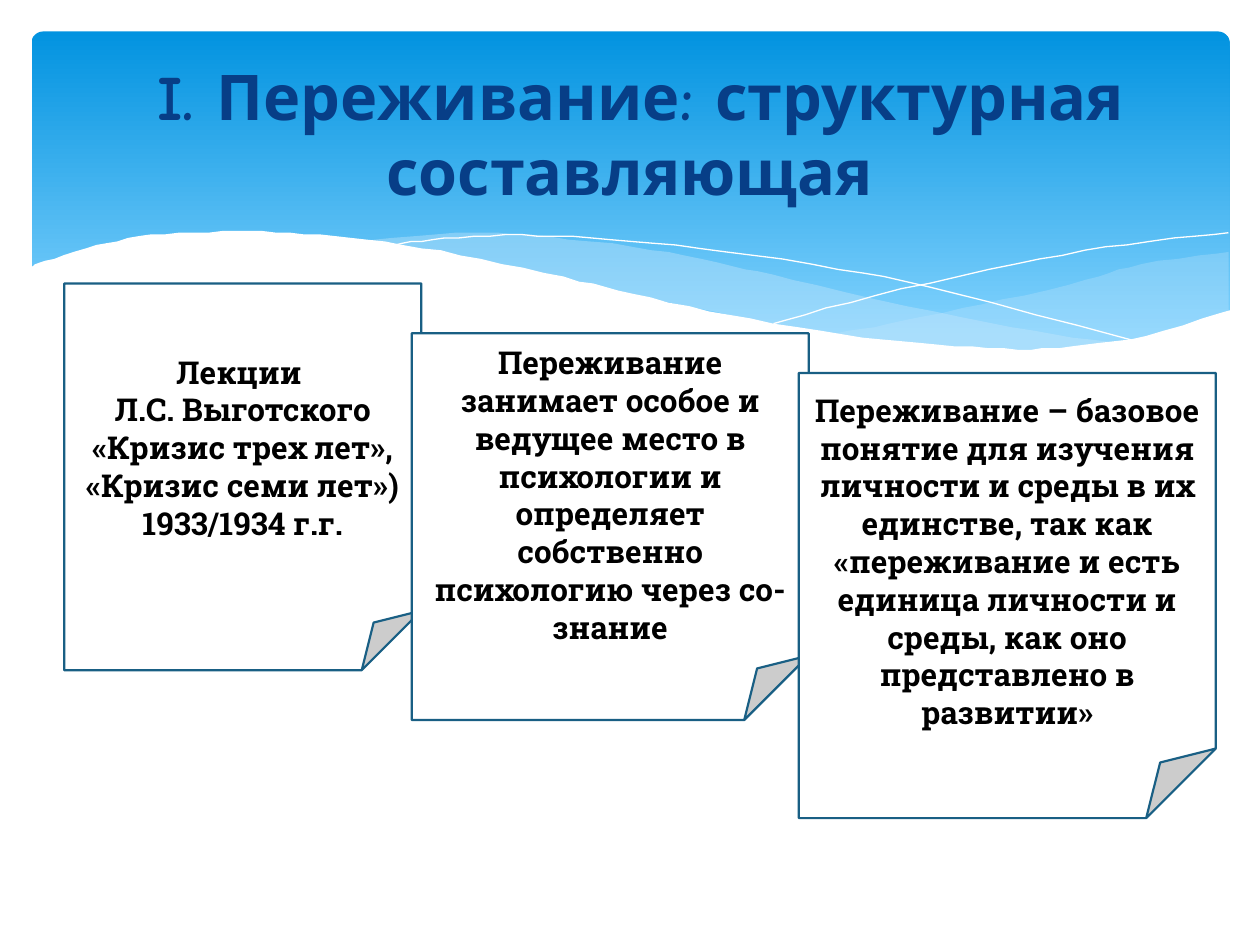
from pptx import Presentation
from pptx.dml.color import RGBColor
from pptx.enum.shapes import MSO_SHAPE
from pptx.enum.text import MSO_ANCHOR, PP_ALIGN
from pptx.oxml.ns import qn
from pptx.util import Pt
from lxml import etree

ROUNDED, FOLDED = MSO_SHAPE.ROUNDED_RECTANGLE, MSO_SHAPE.FOLDED_CORNER
MIDDLE, CENTER = MSO_ANCHOR.MIDDLE, PP_ALIGN.CENTER

WHITE = RGBColor(0xFF, 0xFF, 0xFF)
BLACK = RGBColor(0x00, 0x00, 0x00)
SKY_TOP = RGBColor(0x02, 0x93, 0xE0)
SKY_BOTTOM = RGBColor(0x83, 0xD3, 0xFE)
PALE_BLUE = RGBColor(0xC6, 0xE7, 0xFC)
NAVY = RGBColor(0x07, 0x3E, 0x87)
TEAL = RGBColor(0x19, 0x5F, 0x84)

TITLE_FONT = {"name": "Comic Neue", "size": Pt(36), "bold": True}
NOTE_FONT = {"name": "Roboto Slab", "size": Pt(18), "bold": True}

# Wave knots, in points
RIGHT_BAND = [
    [(702, 144), (652, 151), (620, 160.5), (561, 174), (508, 185), (476, 191)],
    [(476, 191), (527, 197), (586, 200), (634, 197), (673, 189.5), (702, 178)],
]
MIDDLE_BAND = [
    [(643, 196.5), (602.5, 191), (533.5, 178), (453, 160), (410, 150),
     (361, 141), (302, 134.5), (260, 133), (206, 137.5)],
    [(206, 137.5), (261, 146), (323, 160), (407.5, 178.5), (468, 190),
     (530, 198), (589, 200), (643, 196.5)],
]
FALLING_LINE = [(222.5, 140.5), (247, 137), (289, 134.5), (338, 136),
                (400, 142), (479, 153.5), (547, 168), (653, 196)]
RISING_LINE = [(441.5, 185), (500, 169), (580, 151), (644.5, 139.5), (702, 133)]
FRONT_WAVE = [
    [(703.5, 177), (655, 192), (612, 198), (582, 199.5), (536, 197),
     (481, 191), (417, 180), (362, 168), (322, 158.5), (263, 145.5),
     (210, 137), (166, 133), (127, 132.5), (86, 134.5), (55, 140.5),
     (26, 149), (16.5, 153.5)],
    [(16.5, 237), (703.5, 237)],
]

NOTES = [
    ((36.7, 162, 204, 221),
     "Лекции \vЛ.С. Выготского «Кризис трех лет», «Кризис семи лет») "
     "1933/1934 г.г."),
    ((235.3, 190.5, 226.8, 221),
     "Переживание занимает особое и ведущее место в психологии и определяет "
     "собственно психологию через со-знание"),
    ((456.4, 213.2, 238.3, 254.3),
     "Переживание – базовое понятие для изучения личности и среды в их "
     "единстве, так как «переживание и есть единица личности и среды, как оно "
     "представлено в развитии»"),
]


def smooth(knots, steps=5):
    """Return the points of a Catmull-Rom curve through the knots."""
    if len(knots) < 3:
        return knots
    padded = [knots[0], *knots, knots[-1]]
    points = [knots[0]]
    for a, b, c, d in zip(padded, padded[1:], padded[2:], padded[3:]):
        for step in range(1, steps + 1):
            t = step / steps
            points.append(tuple(
                (2 * q + (r - p) * t + (2 * p - 5 * q + 4 * r - s) * t ** 2
                 + (3 * q - p - 3 * r + s) * t ** 3) / 2
                for p, q, r, s in zip(a, b, c, d)))
    return points


class SlideBuilder:
    def __init__(self, page):
        self.page = page

    def set_text(self, box, text, font, color):
        frame = box.text_frame
        frame.word_wrap = True
        frame.vertical_anchor = MIDDLE
        para = frame.paragraphs[0]
        para.text = text
        para.alignment = CENTER
        for span in para.runs:
            for key, value in font.items():
                setattr(span.font, key, value)
            span.font.color.rgb = color

    def sky(self, left, top, width, height):
        panel = self.page.shapes.add_shape(
            ROUNDED, Pt(left), Pt(top), Pt(width), Pt(height))
        panel.adjustments[0] = 0.034
        panel.shadow.inherit = False
        panel.line.fill.background()
        panel.fill.gradient()
        panel.fill.gradient_angle = 270
        stops = [(0, SKY_TOP), (0.9, SKY_BOTTOM)]
        for stop, (position, color) in zip(panel.fill.gradient_stops, stops):
            stop.position = position
            stop.color.rgb = color

    def outline(self, curves, close):
        points = [point for knots in curves for point in smooth(knots)]
        builder = self.page.shapes.build_freeform(*points[0], scale=Pt(1))
        builder.add_line_segments(points[1:], close=close)
        wave = builder.convert_to_shape()
        wave.shadow.inherit = False
        return wave

    def band(self, curves, color, opacity=100):
        wave = self.outline(curves, True)
        wave.line.fill.background()
        wave.fill.solid()
        wave.fill.fore_color.rgb = color
        if opacity < 100:
            tint = wave.element.spPr.find(qn("a:solidFill"))[0]
            etree.SubElement(tint, qn("a:alpha"), val=str(opacity * 1000))

    def hairline(self, knots):
        wave = self.outline([knots], False)
        wave.fill.background()
        wave.line.color.rgb = WHITE
        wave.line.width = Pt(0)

    def title(self, left, top, width, height, text):
        box = self.page.shapes.add_textbox(
            Pt(left), Pt(top), Pt(width), Pt(height))
        self.set_text(box, text, TITLE_FONT, NAVY)

    def note(self, left, top, width, height, text):
        box = self.page.shapes.add_shape(
            FOLDED, Pt(left), Pt(top), Pt(width), Pt(height))
        box.shadow.inherit = False
        box.fill.solid()
        box.fill.fore_color.rgb = WHITE
        box.line.color.rgb = TEAL
        box.line.width = Pt(1.25)
        self.set_text(box, text, NOTE_FONT, BLACK)


def main():
    deck = Presentation()
    deck.slide_width, deck.slide_height = Pt(720), Pt(540)
    slide = SlideBuilder(deck.slides.add_slide(deck.slide_layouts[6]))
    slide.sky(18, 18, 684.7, 194.4)
    slide.band(RIGHT_BAND, PALE_BLUE, 29)
    slide.band(MIDDLE_BAND, PALE_BLUE, 40)
    slide.hairline(FALLING_LINE)
    slide.hairline(RISING_LINE)
    slide.band(FRONT_WAVE, WHITE)
    slide.title(36, 26.6, 648, 98.6, " I. Переживание: структурная составляющая")
    for place, text in NOTES:
        slide.note(*place, text)
    deck.save("out.pptx")


if __name__ == "__main__":
    main()
